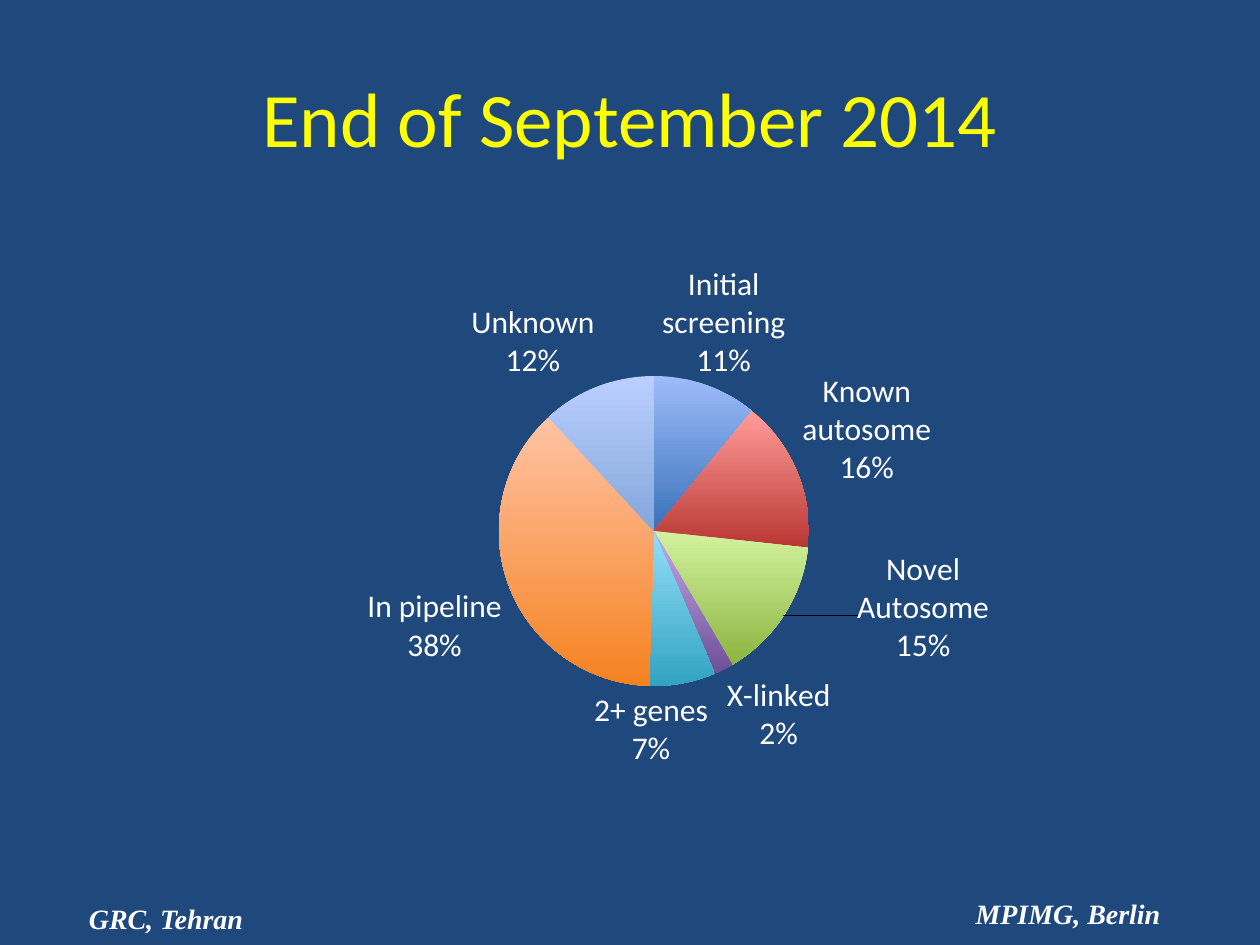
from dataclasses import dataclass

import pptx
import pptx.chart.data
import pptx.dml.color
import pptx.enum.chart
import pptx.enum.text
import pptx.oxml
import pptx.oxml.ns
import pptx.util

EMU_PER_PX = 914400 / 126
WHITE = "FFFFFF"
CHART_NAMESPACE = pptx.oxml.ns.nsdecls("c")


@dataclass(frozen=True)
class Box:
    left: int
    top: int
    width: int
    height: int

    def emu(self) -> tuple:
        return tuple(px(n) for n in (self.left, self.top, self.width, self.height))


@dataclass(frozen=True)
class Slice:
    name: str
    value: int
    top_color: str
    bottom_color: str
    label_shift: tuple = (0, 0)


SLICES = [
    Slice("Initial screening", 11, "9EBBFA", "3A72BA", (-46, 1)),
    Slice("Known autosome", 16, "FF9C9A", "B93733", (-2, 17)),
    Slice("Novel Autosome", 15, "D3F29E", "8DB441", (67, -69)),
    Slice("X-linked", 2, "C4A9EA", "6F4F98"),
    Slice("2+ genes", 7, "93DFF9", "32A3C1", (-90, 1)),
    Slice("In pipeline", 38, "FFC3A5", "F58220"),
    Slice("Unknown", 12, "BACFFF", "84A6DB"),
]
CHART = Box(210, 246, 840, 560)
PIE = Box(499, 376, 310, 310)


def px(length: int) -> pptx.util.Emu:
    return pptx.util.Emu(round(length * EMU_PER_PX))


def color(value: str) -> pptx.dml.color.RGBColor:
    return pptx.dml.color.RGBColor.from_string(value)


def format_font(font, *, size: int, name: str = "Calibri", fill: str = WHITE) -> None:
    font.name, font.size = name, pptx.util.Pt(size)
    font.color.rgb = color(fill)


def add_text(slide, text: str, box: Box, *, size: int, font: str = "Calibri",
             fill: str = WHITE, bold: bool = False, italic: bool = False,
             wrap: bool = True) -> None:
    shape = slide.shapes.add_textbox(*box.emu())
    frame = shape.text_frame
    frame.word_wrap = wrap
    frame.vertical_anchor = pptx.enum.text.MSO_ANCHOR.MIDDLE
    paragraph = frame.paragraphs[0]
    paragraph.alignment = pptx.enum.text.PP_ALIGN.CENTER
    run = paragraph.add_run()
    run.text = text
    format_font(run.font, size=size, name=font, fill=fill)
    run.font.bold, run.font.italic = bold, italic


def manual_layout(x: float, y: float, extra: str = ""):
    """Return a chart layout with positions as fractions of the chart."""
    return pptx.oxml.parse_xml(
        f'<c:layout {CHART_NAMESPACE}><c:manualLayout>{extra}'
        f'<c:x val="{x:.3f}"/><c:y val="{y:.3f}"/></c:manualLayout></c:layout>')


def place_pie(chart) -> None:
    modes = ('<c:layoutTarget val="inner"/><c:xMode val="edge"/>'
             '<c:yMode val="edge"/>')
    layout = manual_layout((PIE.left - CHART.left) / CHART.width,
                           (PIE.top - CHART.top) / CHART.height, modes)
    for tag, share in (("w", PIE.width / CHART.width), ("h", PIE.height / CHART.height)):
        layout[0].append(pptx.oxml.parse_xml(
            f'<c:{tag} {CHART_NAMESPACE} val="{share:.3f}"/>'))
    plot_area = chart.plots[0]._element.getparent()
    for old_layout in plot_area.findall(pptx.oxml.ns.qn("c:layout")):
        plot_area.remove(old_layout)
    plot_area.insert(0, layout)


def shifted_label(index: int, shift: tuple):
    """Return the label of one slice, moved by px from its usual place."""
    label = pptx.oxml.parse_xml(
        f'<c:dLbl {CHART_NAMESPACE}><c:idx val="{index}"/><c:dLblPos val="outEnd"/>'
        '<c:showLegendKey val="0"/><c:showVal val="0"/><c:showCatName val="1"/>'
        '<c:showSerName val="0"/><c:showPercent val="1"/><c:showBubbleSize val="0"/>'
        '</c:dLbl>')
    label.insert(1, manual_layout(shift[0] / CHART.width, shift[1] / CHART.height))
    return label


def format_labels(series) -> None:
    labels = series.data_labels
    labels.show_category_name = True
    labels.show_percentage = True
    labels.show_value = False
    labels.position = pptx.enum.chart.XL_LABEL_POSITION.OUTSIDE_END
    format_font(labels.font, size=18)
    for leader in labels._element.findall(pptx.oxml.ns.qn("c:showLeaderLines")):
        labels._element.remove(leader)
    labels._element.append(pptx.oxml.parse_xml(
        f'<c:showLeaderLines {CHART_NAMESPACE} val="1"/>'))

    # Labels moved apart; the leader line takes the label's font colour
    moved = [(index, part.label_shift) for index, part in enumerate(SLICES)
             if part.label_shift != (0, 0)]
    for position, (index, shift) in enumerate(moved):
        labels._element.insert(position, shifted_label(index, shift))
        format_font(series.points[index].data_label.font, size=18)


def add_pie(slide) -> None:
    data = pptx.chart.data.CategoryChartData()
    data.categories = [part.name for part in SLICES]
    data.add_series("Series 1", [part.value for part in SLICES])
    chart = slide.shapes.add_chart(
        pptx.enum.chart.XL_CHART_TYPE.PIE, *CHART.emu(), data).chart
    chart.has_title = False
    chart.has_legend = False
    format_font(chart.font, size=18)
    chart.plots[0].vary_by_categories = True
    series = chart.plots[0].series[0]
    for index, part in enumerate(SLICES):
        point_format = series.points[index].format
        point_format.line.fill.background()
        fill = point_format.fill
        fill.gradient()
        fill.gradient_angle = 270
        for stop, value in zip(fill.gradient_stops, (part.top_color, part.bottom_color)):
            stop.color.rgb = color(value)
    format_labels(series)
    place_pie(chart)


def main() -> None:
    presentation = pptx.Presentation()
    presentation.slide_width, presentation.slide_height = px(1260), px(945)
    slide = presentation.slides.add_slide(presentation.slide_layouts[6])
    slide.background.fill.solid()
    slide.background.fill.fore_color.rgb = color("1F497D")

    # Institutes at the foot
    for text, box in (("GRC, Tehran", Box(54, 887, 224, 63)),
                      ("MPIMG, Berlin", Box(956, 882, 224, 63))):
        add_text(slide, text, box, size=16, font="Times New Roman",
                 bold=True, italic=True, wrap=False)

    # Title and chart
    add_text(slide, "End of September 2014", Box(63, 38, 1134, 158),
             size=44, fill="FFFF00")
    add_pie(slide)
    presentation.save("out.pptx")


if __name__ == "__main__":
    main()
